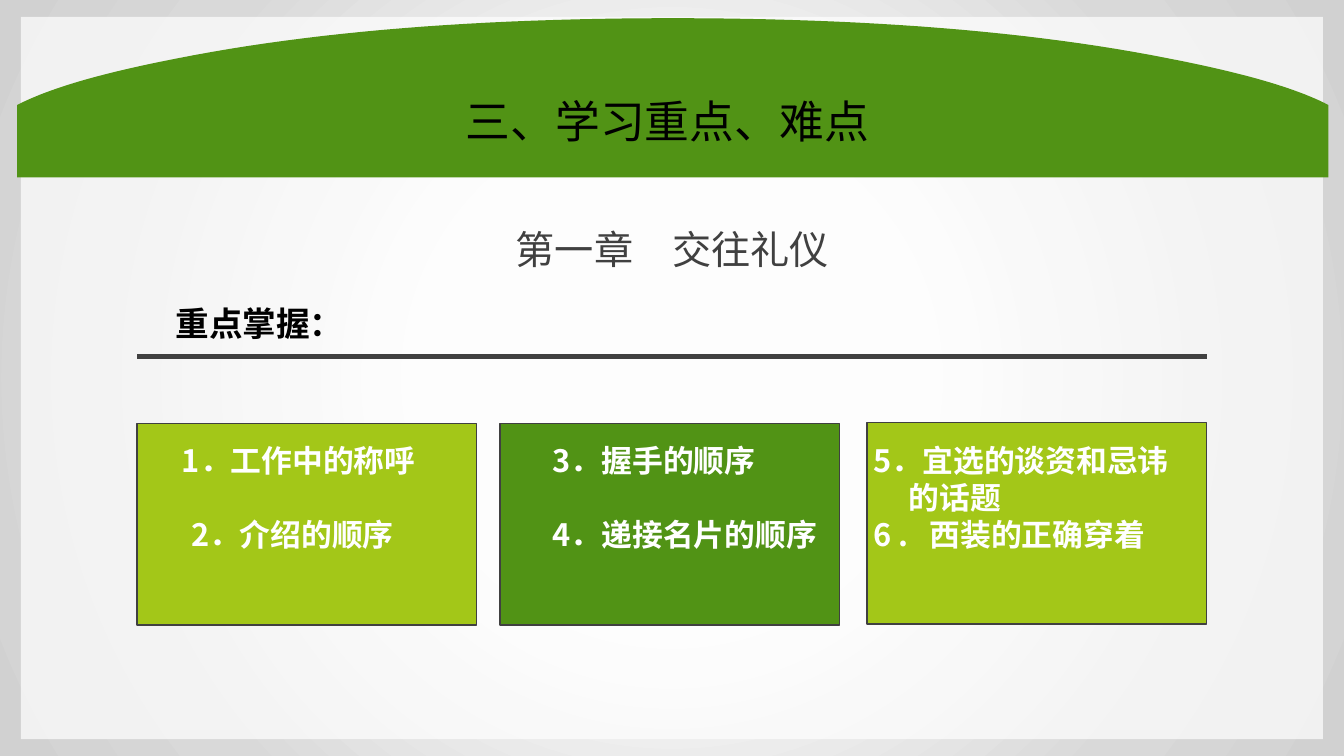
import pptx
import pptx.util
import pptx.dml.color
import pptx.enum.shapes
import pptx.enum.text
import pptx.oxml
import pptx.oxml.ns

Pt = pptx.util.Pt
qn = pptx.oxml.ns.qn
CENTER = pptx.enum.text.PP_ALIGN.CENTER
LEFT = pptx.enum.text.PP_ALIGN.LEFT
RECTANGLE = pptx.enum.shapes.MSO_SHAPE.RECTANGLE

TITLE = "三、学习重点、难点"
CHAPTER = "第一章　交往礼仪"
HEADING = "重点掌握："

# Each line: text, left margin, first-line indent, space before
CARDS = [
    {"left": 98, "top": 302.4, "fill": "lime", "text_left": 99.4,
     "text_width": 218.9, "align": CENTER,
     "lines": [("1．工作中的称呼", 0, 9, 0), ("2．介绍的顺序", 0, 0, 26.6)]},
    {"left": 357.1, "top": 302.4, "fill": "green", "text_left": 343.4,
     "text_width": 247.7, "align": CENTER,
     "lines": [("3．握手的顺序", 0, 0, 0), ("4．递接名片的顺序", 0, 44, 26.6)]},
    {"left": 619.2, "top": 301.7, "fill": "lime", "text_left": 617,
     "text_width": 241.2, "align": LEFT,
     "lines": [("5．宜选的谈资和忌讳的话题", 25, -25, 0),
               ("6 .\t西装的正确穿着", 40, -40, 0)]},
]
CARD_SIZE = (242.6, 144)

THEME = {
    "green": "519315", "lime": "A3C718", "gray": "404040",
    "white": "FFFFFF", "black": "000000",
    "backdrop": [(0, "FBFBFB"), (30, "FBFBFB"), (74, "D9D9D9"), (100, "D1D1D1")],
    "panel_opacity": 70,
    "font": "Noto Sans CJK SC", "heading_font": "Calibri",
    "title": 32, "chapter": 28, "heading": 24, "card": 22,
    "line_height": 1.21, "baseline_shift": 0.09,
}

# Right half of the banner's arc: offsets from its middle axis, and heights
BANNER_AXIS, BANNER_BOTTOM = 480.6, 126.7
BANNER_CURVES = [
    [(0, 13), (138.5, 13), (256.5, 22.3), (354.4, 41.8)],
    [(354.4, 41.8), (406, 51.8), (444.5, 62.6), (468.3, 75)],
]


def color(name):
    return pptx.dml.color.RGBColor.from_string(THEME[name])


def add_rectangle(page, left, top, width, height, fill, outline=None):
    shape = page.shapes.add_shape(RECTANGLE, Pt(left), Pt(top), Pt(width), Pt(height))
    shape.shadow.inherit = False
    shape.fill.solid()
    shape.fill.fore_color.rgb = color(fill)
    if outline:
        shape.line.color.rgb = color(outline)
        shape.line.width = Pt(1)
    else:
        shape.line.fill.background()
    return shape


def set_radial_fill(shape, stops):
    """Swap the solid fill for a gradient that spreads from the centre."""
    stop_xml = "".join(
        f'<a:gs pos="{place * 1000}"><a:srgbClr val="{value}"/></a:gs>'
        for place, value in stops)
    gradient = pptx.oxml.parse_xml(
        f'<a:gradFill {pptx.oxml.ns.nsdecls("a")} rotWithShape="1">'
        f'<a:gsLst>{stop_xml}</a:gsLst><a:path path="circle">'
        '<a:fillToRect l="50000" t="50000" r="50000" b="50000"/></a:path></a:gradFill>')
    properties = shape.element.spPr
    properties.replace(properties.find(qn("a:solidFill")), gradient)


def set_opacity(shape, percent):
    tint = shape.element.spPr.find(qn("a:solidFill"))[0]
    tint.append(tint.makeelement(qn("a:alpha"), {"val": str(percent * 1000)}))


def add_text(page, left, top, width, lines, size, ink, align=LEFT,
             bold=False, font="font", spacing=1):
    points = THEME[size]
    pitch = round(points * THEME["line_height"] * spacing, 1)
    box = page.shapes.add_textbox(
        Pt(left), Pt(top + points * THEME["baseline_shift"]),
        Pt(width), Pt(pitch * len(lines) + 7.2))
    frame = box.text_frame
    frame.word_wrap = True
    frame.text = "\n".join(line[0] for line in lines)
    for para, (_, margin, indent, before) in zip(frame.paragraphs, lines):
        properties = para._p.get_or_add_pPr()
        properties.set("marL", str(Pt(margin)))
        properties.set("indent", str(Pt(indent)))
        para.alignment = align
        para.line_spacing = Pt(pitch)
        para.space_before = Pt(before)
        for span in para.runs:
            span.font.size = Pt(points)
            span.font.bold = bold
            span.font.color.rgb = color(ink)
            span.font.name = THEME[font]
            latin = span.font._element.find(qn("a:latin"))
            latin.addnext(latin.makeelement(qn("a:ea"), {"typeface": THEME["font"]}))


def curve_points(curve, steps=24):
    """Points along a cubic curve, without its first one."""
    for step in range(1, steps + 1):
        t = step / steps
        weights = ((1 - t) ** 3, 3 * t * (1 - t) ** 2, 3 * t * t * (1 - t), t ** 3)
        yield tuple(sum(w * point[axis] for w, point in zip(weights, curve))
                    for axis in (0, 1))


def add_banner(page):
    half = [point for curve in BANNER_CURVES for point in curve_points(curve)]
    edge = half[-1][0]
    arc = [(-x, y) for x, y in reversed(half)] + [BANNER_CURVES[0][0]] + half
    outline = [(Pt(BANNER_AXIS + x), Pt(y))
               for x, y in arc + [(edge, BANNER_BOTTOM), (-edge, BANNER_BOTTOM)]]
    builder = page.shapes.build_freeform(*outline[0])
    builder.add_line_segments(outline[1:], close=True)
    banner = builder.convert_to_shape()
    banner.shadow.inherit = False
    banner.fill.solid()
    banner.fill.fore_color.rgb = color("green")
    banner.line.fill.background()


def add_rule(page, left, right, height):
    rule = page.shapes.add_connector(
        pptx.enum.shapes.MSO_CONNECTOR.STRAIGHT,
        Pt(left), Pt(height), Pt(right), Pt(height))
    rule.line.color.rgb = color("gray")
    rule.line.width = Pt(3.25)
    properties = rule._element.spPr
    properties.append(properties.makeelement(qn("a:effectLst"), {}))


def main():
    deck = pptx.Presentation()
    deck.slide_width, deck.slide_height = Pt(960), Pt(540)
    page = deck.slides.add_slide(deck.slide_layouts[6])

    set_radial_fill(add_rectangle(page, 0, 0, 960, 540, "white"), THEME["backdrop"])
    set_opacity(add_rectangle(page, 15, 12, 930, 516, "white"), THEME["panel_opacity"])

    for card in CARDS:
        add_rectangle(page, card["left"], card["top"], *CARD_SIZE, card["fill"], "gray")
    add_rule(page, 98, 862.4, 254.7)
    add_text(page, 98, 144.7, 764.6, [(CHAPTER, 0, 0, 0)], "chapter", "gray",
             CENTER, spacing=1.3)
    for card in CARDS:
        add_text(page, card["text_left"], 309.6, card["text_width"], card["lines"],
                 "card", "white", card["align"], bold=True)

    add_banner(page)
    add_text(page, 325.6, 60.5, 319.7, [(TITLE, 0, 0, 0)], "title", "black")
    add_text(page, 94.3, 210.2, 480.2, [(HEADING, 0, 24, 0)], "heading", "black",
             bold=True, font="heading_font")
    deck.save("out.pptx")


if __name__ == "__main__":
    main()
